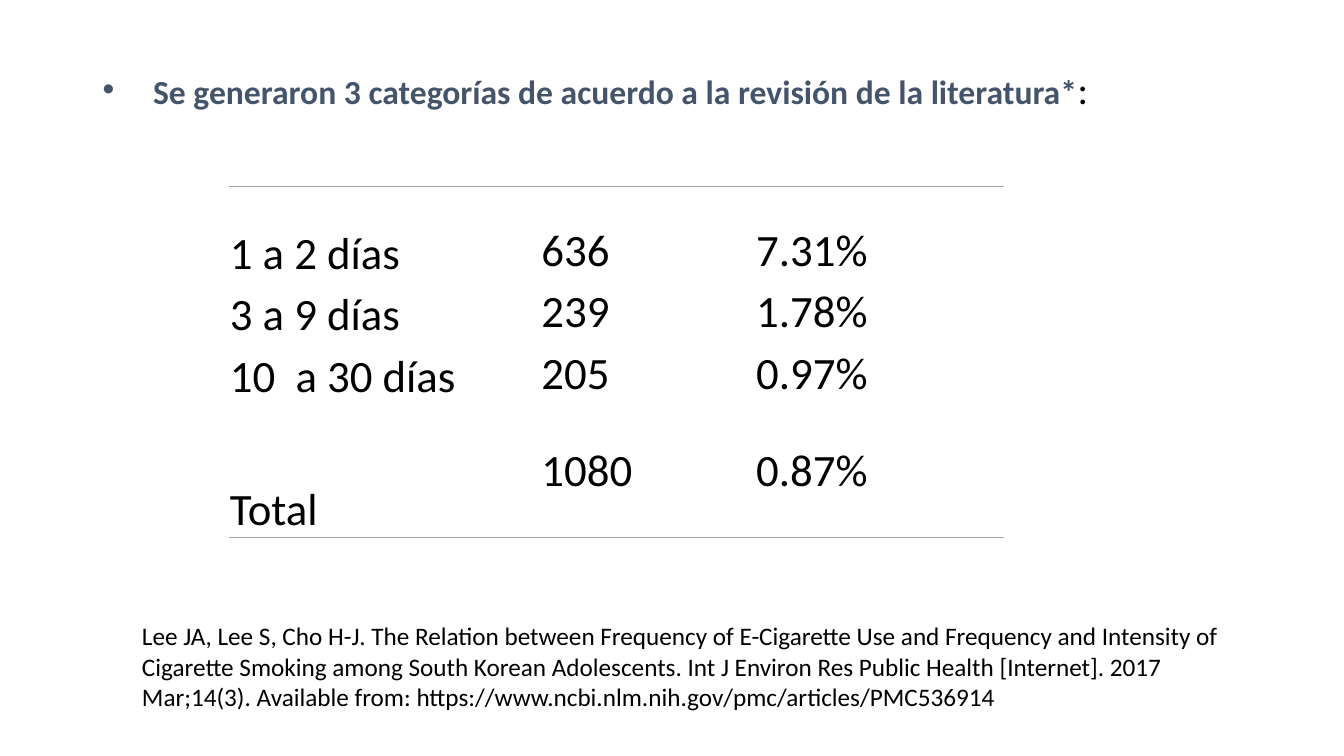
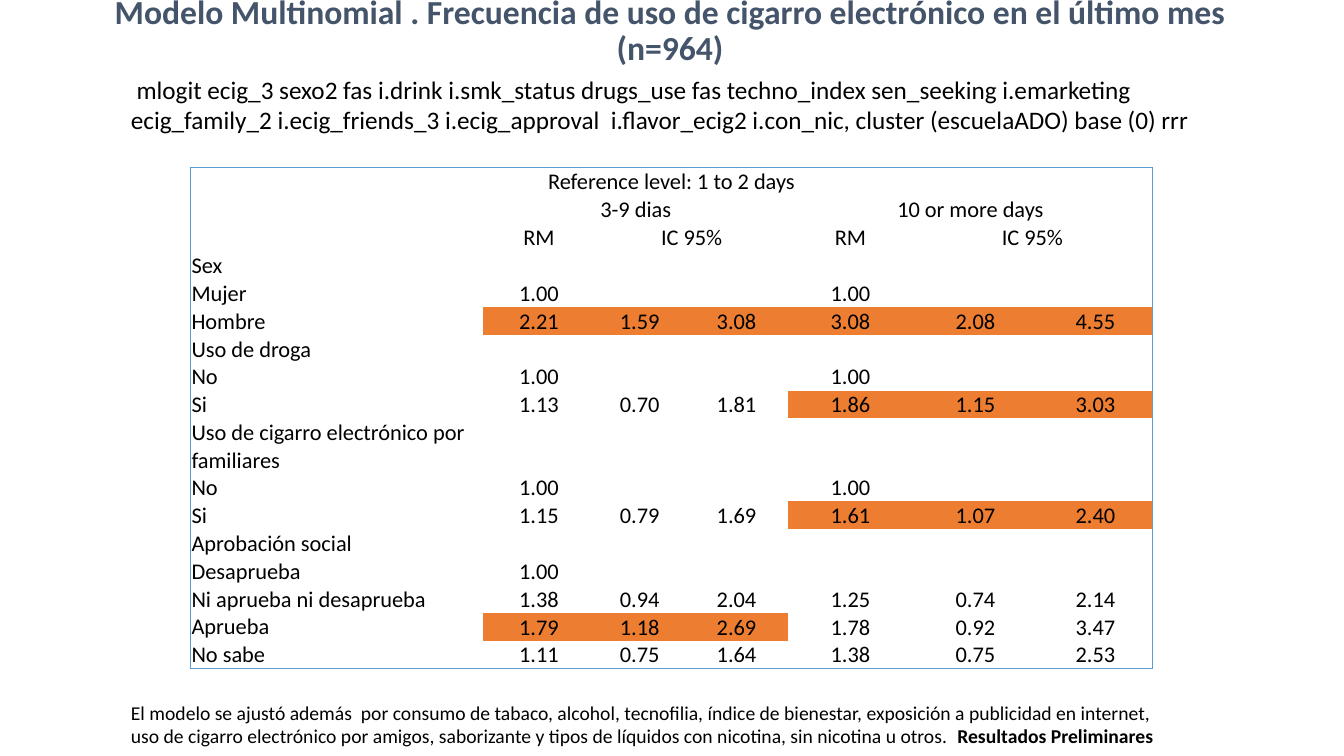
from lxml import etree
from pptx import Presentation
from pptx.dml.color import RGBColor
from pptx.enum.text import MSO_ANCHOR, PP_ALIGN
from pptx.oxml.ns import qn
from pptx.util import Inches, Pt

LEFT, CENTER = PP_ALIGN.LEFT, PP_ALIGN.CENTER
TOP, MIDDLE, BOTTOM = MSO_ANCHOR.TOP, MSO_ANCHOR.MIDDLE, MSO_ANCHOR.BOTTOM

FONT = "Calibri"
BLACK = RGBColor(0x00, 0x00, 0x00)
SLATE = RGBColor(0x44, 0x54, 0x6A)
GRAY = RGBColor(0xA5, 0xA5, 0xA5)
BLUE = RGBColor(0x5B, 0x9B, 0xD5)
ORANGE = RGBColor(0xED, 0x7D, 0x31)

HEADING = {"size": 24, "color": SLATE, "bold": True}
NO_STYLE = "{2D5ABB26-0587-4C30-8999-92F81FD0307C}"


def write(p, text, size=18, color=BLACK, bold=False):
    """Add one formatted run to a paragraph."""
    r = p.add_run()
    r.text = text
    r.font.name = FONT
    r.font.size = Pt(size)
    r.font.bold = bold
    r.font.color.rgb = color


class Deck:
    def __init__(self):
        self.prs = Presentation()
        self.prs.slide_width = Inches(13.33)
        self.prs.slide_height = Inches(7.5)
        self.s = None

    def new_slide(self):
        self.s = self.prs.slides.add_slide(self.prs.slide_layouts[6])

    def text(self, x, y, w, h, *runs, align=LEFT, anchor=TOP, spacing=None):
        """Add a text box; each run is a (text, format) pair."""
        sp = self.s.shapes.add_textbox(Inches(x), Inches(y), Inches(w), Inches(h))
        tf = sp.text_frame
        tf.word_wrap = True
        tf.vertical_anchor = anchor
        p = tf.paragraphs[0]
        p.alignment = align
        p.line_spacing = spacing
        for text, fmt in runs:
            write(p, text, **fmt)
        return p

    def bullet(self, p, indent):
        pPr = p._p.get_or_add_pPr()
        pPr.set("marL", str(Inches(indent)))
        pPr.set("indent", str(-Inches(indent)))
        etree.SubElement(pPr, qn("a:buFont"), typeface="Arial")
        etree.SubElement(pPr, qn("a:buChar"), char="•")

    def table(self, x, y, cols, heights, rows, size, edges, line, spans=(),
              number_align=LEFT, filled=()):
        """Add a plain table; edges names the outer sides that get a line."""
        shape = self.s.shapes.add_table(
            len(rows), len(cols), Inches(x), Inches(y),
            Inches(sum(cols)), Inches(sum(heights)))
        table = shape.table
        table.first_row = table.horz_banding = False
        table._tbl.tblPr.find(qn("a:tableStyleId")).text = NO_STYLE
        for col, w in zip(table.columns, cols):
            col.width = Inches(w)
        for row, h in zip(table.rows, heights):
            row.height = Inches(h)
        for i, c, width in spans:
            table.cell(i, c).merge(table.cell(i, c + width - 1))
        for i, row in enumerate(rows):
            for c, text in enumerate(row):
                cell = table.cell(i, c)
                self.cell(cell, text, size, LEFT if c == 0 and not cell.is_merge_origin
                          else number_align, BOTTOM if c == 0 else MIDDLE)
                if (i, c) in filled:
                    cell.fill.solid()
                    cell.fill.fore_color.rgb = ORANGE
                else:
                    cell.fill.background()
                end = c + (cell.span_width if cell.is_merge_origin else 1)
                outer = {"L": c == 0, "R": end == len(cols),
                         "T": i == 0, "B": i == len(rows) - 1}
                self.borders(cell, [e for e in edges if outer[e]], *line)

    def cell(self, cell, text, size, align, anchor):
        cell.margin_left = cell.margin_right = cell.margin_top = Inches(0.01)
        cell.margin_bottom = 0
        cell.vertical_anchor = anchor
        p = cell.text_frame.paragraphs[0]
        p.alignment = align
        if text:
            write(p, text, size=size)
        else:
            etree.SubElement(p._p, qn("a:endParaRPr"), sz="1200")

    def borders(self, cell, edges, color, width):
        tcPr = cell._tc.get_or_add_tcPr()
        for n, edge in enumerate(edges):
            ln = etree.Element(qn("a:ln" + edge), w=str(Pt(width)))
            fill = etree.SubElement(ln, qn("a:solidFill"))
            etree.SubElement(fill, qn("a:srgbClr"), val=str(color))
            tcPr.insert(n, ln)


def frequency_slide(deck):
    deck.new_slide()
    # Heading
    p = deck.text(
        0.92, 0.6, 11.63, 0.57,
        ("Se generaron 3 categorías de acuerdo a la revisión de la literatura*", HEADING),
        (":", {"size": 28}))
    deck.bullet(p, 0.5)
    # Frequency table
    rows = [
        ("", "", ""),
        ("1 a 2 días", "636", "7.31%"),
        ("3 a 9 días", "239", "1.78%"),
        ("10  a 30 días", "205", "0.97%"),
        ("Total", "1080", "0.87%"),
    ]
    deck.table(2.27, 1.85, [3.09, 2.13, 2.47], [0.33] + [0.61] * 3 + [1.32], rows,
               size=32, edges="TB", line=(GRAY, 1), spans=[(0, 0, 3)])
    # Reference
    deck.text(
        1.31, 6.11, 11.11, 1,
        ("Lee JA, Lee S, Cho H-J. The Relation between Frequency of E-Cigarette Use and "
         "Frequency and Intensity of Cigarette Smoking among South Korean Adolescents. "
         "Int J Environ Res Public Health [Internet]. 2017 Mar;14(3). Available from: "
         "https://www.ncbi.nlm.nih.gov/pmc/articles/PMC536914", {}))


def model_slide(deck):
    deck.new_slide()
    # Title and model command
    deck.text(
        0.54, 0, 12.21, 0.62,
        ("Modelo Multinomial . Frecuencia de uso de cigarro electrónico en el último mes "
         "(n=964)", HEADING), align=CENTER, anchor=MIDDLE, spacing=0.9)
    deck.text(
        1.2, 0.69, 11, 0.71,
        (" mlogit ecig_3 sexo2 fas i.drink i.smk_status drugs_use fas techno_index "
         "sen_seeking i.emarketing ecig_family_2 i.ecig_friends_3 i.ecig_approval  "
         "i.flavor_ecig2 i.con_nic, cluster (escuelaADO) base (0) rrr", {}))
    # Results: label, then ratio and interval for each of two groups
    results = [
        "Reference level: 1 to 2 days",
        "|3-9 dias|||10 or more days",
        "|RM|IC 95%||RM|IC 95%",
        "Sex",
        "Mujer|1.00|||1.00",
        "Hombre|2.21|1.59|3.08|3.08|2.08|4.55",
        "Uso de droga",
        "No|1.00|||1.00",
        "Si|1.13|0.70|1.81|1.86|1.15|3.03",
        "Uso de cigarro electrónico por familiares",
        "No|1.00|||1.00",
        "Si|1.15|0.79|1.69|1.61|1.07|2.40",
        "Aprobación social",
        "Desaprueba|1.00",
        "Ni aprueba ni desaprueba|1.38|0.94|2.04|1.25|0.74|2.14",
        "Aprueba|1.79|1.18|2.69|1.78|0.92|3.47",
        "No sabe|1.11|0.75|1.64|1.38|0.75|2.53",
    ]
    cols = [2.9, 1.11, 0.89, 1.03, 1.23, 1.25, 1.13]
    rows = [(line.split("|") + [""] * len(cols))[:len(cols)] for line in results]
    heights = [0.54 if len(row[0]) > 30 else 0.27 for row in rows]
    # Highlight the groups whose interval lies above 1
    filled = {(i, start + k)
              for i, row in enumerate(rows) if i > 2
              for start in (1, 4) if row[start + 1] and float(row[start + 1]) > 1
              for k in range(3)}
    deck.table(1.89, 1.66, cols, heights, rows, size=16, edges="LRTB", line=(BLUE, 0.5),
               spans=[(0, 0, 7), (1, 1, 3), (1, 4, 3), (2, 2, 2), (2, 5, 2)],
               number_align=CENTER, filled=filled)
    # Footnote
    deck.text(
        1.2, 6.9, 10.41, 0.57,
        ("El modelo se ajustó además  por consumo de tabaco, alcohol, tecnofilia, índice "
         "de bienestar, exposición a publicidad en internet, uso de cigarro electrónico "
         "por amigos, saborizante y tipos de líquidos con nicotina, sin nicotina u "
         "otros.  ", {"size": 14}),
        ("Resultados Preliminares", {"size": 14, "bold": True}))


def main():
    deck = Deck()
    frequency_slide(deck)
    model_slide(deck)
    deck.prs.save("out.pptx")


if __name__ == "__main__":
    main()
